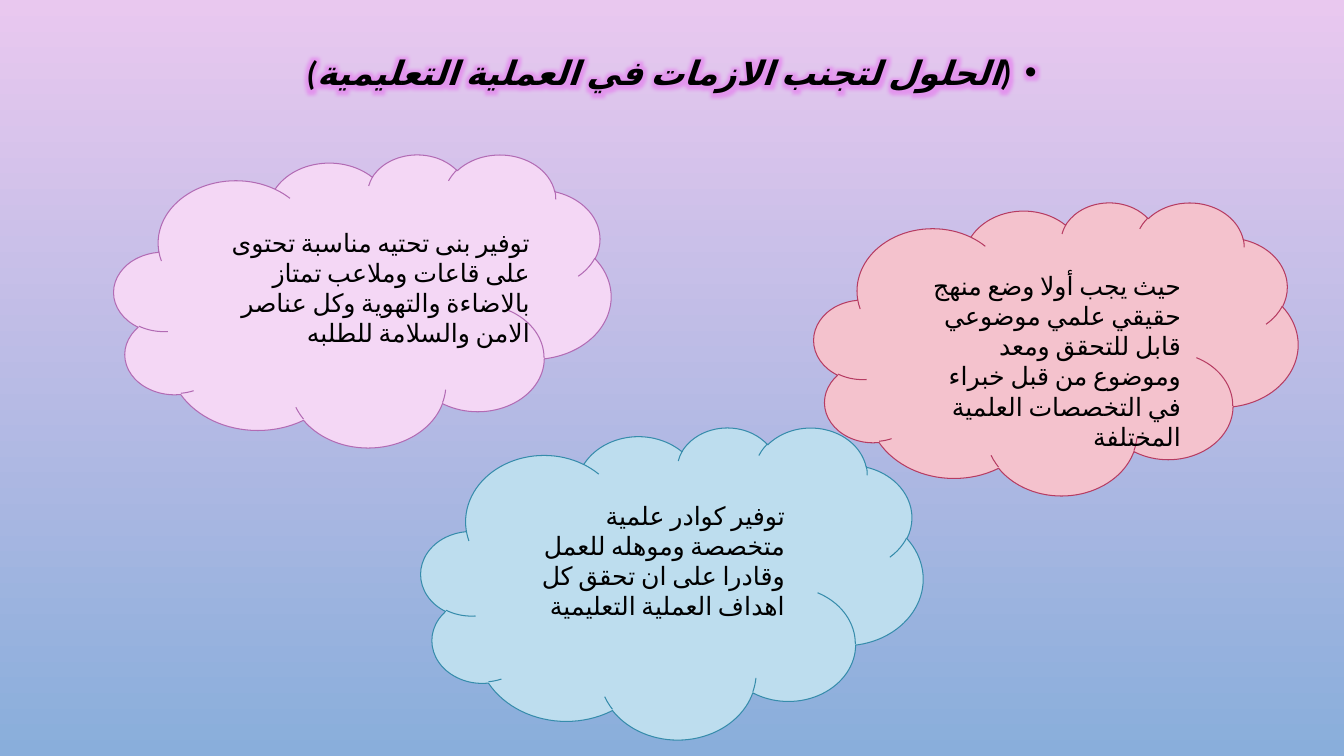
import pptx
import pptx.util
import pptx.dml.color
import pptx.enum.lang
import pptx.enum.shapes
import pptx.enum.text
import pptx.oxml
import pptx.oxml.ns

PX = 12192000 / 1344
FONT = "Calibri"
DRAWING = pptx.oxml.ns.nsdecls("a")
Align = pptx.enum.text.PP_ALIGN


def color(hex_text):
    return pptx.dml.color.RGBColor.from_string(hex_text)


def write_rtl(box, text, align, formats, bullet=False):
    """Fill a box with one right-to-left paragraph and return its run."""
    frame = box.text_frame
    frame.word_wrap = True
    frame.vertical_anchor = pptx.enum.text.MSO_ANCHOR.TOP
    para = frame.paragraphs[0]
    para.alignment = align
    properties = para._p.get_or_add_pPr()
    properties.set("rtl", "1")
    if bullet:
        properties.set("marL", "228600")
        properties.set("indent", "-228600")
        for element in ('buClr {}><a:srgbClr val="000000"/></a:buClr>',
                        'buFont {} typeface="Arial"/>',
                        'buChar {} char="•"/>'):
            properties.append(pptx.oxml.parse_xml("<a:" + element.format(DRAWING)))
    span = para.add_run()
    span.text = text
    for name, value in formats.items():
        setattr(span.font, name, value)
    span.font.language_id = pptx.enum.lang.MSO_LANGUAGE_ID.ARABIC_IRAQ
    span.font.color.rgb = color("000000")
    span.font._element.append(
        pptx.oxml.parse_xml(f'<a:cs {DRAWING} typeface="{FONT}"/>'))
    return span


deck = pptx.Presentation()
deck.slide_width = round(1344 * PX)
deck.slide_height = round(756 * PX)
page = deck.slides.add_slide(deck.slide_layouts[5])

backdrop = page.background.fill
backdrop.gradient()
backdrop.gradient_angle = 270
for stop, shade in zip(backdrop.gradient_stops, ("E9C8EF", "89AEDB")):
    stop.color.rgb = color(shade)

# Heading with a soft glow
title = page.shapes.title
for name, length in dict(left=59, top=39, width=1225, height=700).items():
    setattr(title, name, round(length * PX))
title.text_frame.auto_size = pptx.enum.text.MSO_AUTO_SIZE.NONE
heading = write_rtl(
    title, "(الحلول لتجنب الازمات في العملية التعليمية)", Align.CENTER,
    dict(name=FONT, size=pptx.util.Pt(24), bold=True, italic=True), bullet=True)
title.text_frame.paragraphs[0].line_spacing = 1.2
glow = pptx.oxml.parse_xml(
    f'<a:effectLst {DRAWING}><a:glow rad="127000"><a:srgbClr val="E85CF0">'
    '<a:alpha val="45000"/></a:srgbClr></a:glow></a:effectLst>')
heading.font._element.find(pptx.oxml.ns.qn("a:solidFill")).addnext(glow)

# Clouds: place, fill, line
clouds = [
    ((814, 202, 484, 293), "F4C2CD", "B63C62"),
    ((114, 154, 497, 293), "F4D7F5", "B26BB4"),
    ((421, 427, 502, 312), "BDDDEE", "368CAB"),
]
for place, fill, line in clouds:
    cloud = page.shapes.add_shape(
        pptx.enum.shapes.MSO_SHAPE.CLOUD, *(round(length * PX) for length in place))
    cloud.shadow.inherit = False
    cloud.fill.solid()
    cloud.fill.fore_color.rgb = color(fill)
    cloud.line.color.rgb = color(line)
    cloud.line.width = pptx.util.Pt(0.75)

# Solutions written over the clouds
solutions = [
    ((923, 265, 268, 163),
     "حيث يجب أولا وضع منهج حقيقي علمي موضوعي قابل للتحقق ومعد وموضوع من قبل "
     "خبراء في التخصصات العلمية المختلفة"),
    ((201, 222, 339, 132),
     "توفير بنى تحتيه مناسبة تحتوى على قاعات وملاعب تمتاز بالاضاءة والتهوية "
     "وكل عناصر الامن والسلامة للطلبه"),
    ((516, 495, 279, 102),
     "توفير كوادر علمية متخصصة وموهله للعمل وقادرا على ان تحقق كل اهداف "
     "العملية التعليمية"),
]
for place, text in solutions:
    box = page.shapes.add_textbox(*(round(length * PX) for length in place))
    box.text_frame.auto_size = pptx.enum.text.MSO_AUTO_SIZE.SHAPE_TO_FIT_TEXT
    write_rtl(box, text, Align.RIGHT, dict(name=FONT, size=pptx.util.Pt(18)))

deck.save("out.pptx")
